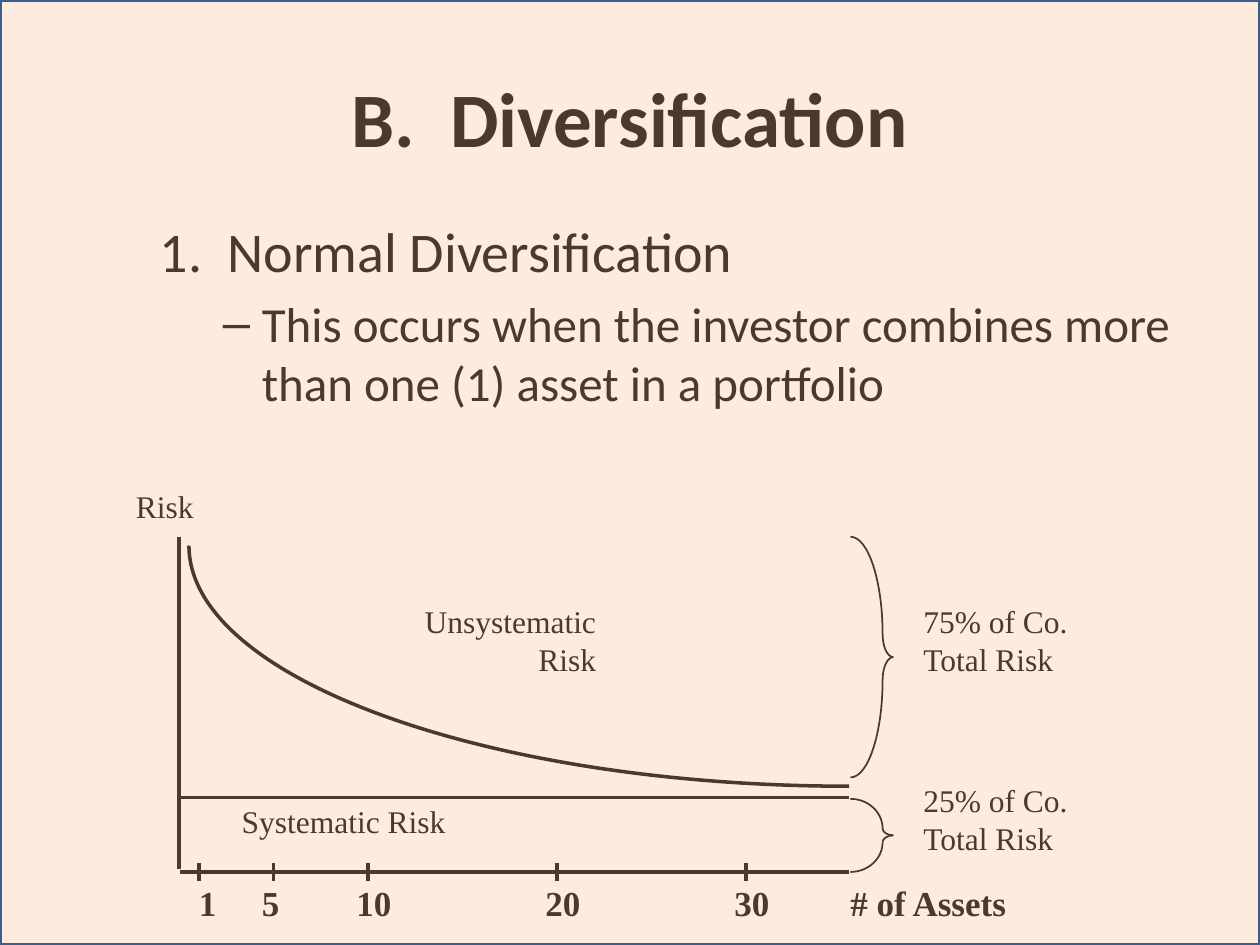
from dataclasses import dataclass

from lxml import etree
from pptx import Presentation
from pptx import util as u
from pptx.dml.color import RGBColor
from pptx.enum import shapes, text
from pptx.oxml.ns import qn

EMU_PER_PX = 9144  # 100 px to the inch
ROUND = 0.55  # handle length of a quarter ellipse, as a share of its radius


@dataclass(frozen=True)
class Theme:
    ink: RGBColor = RGBColor(0, 0, 0)
    tint: RGBColor = RGBColor(0xFA, 0xC0, 0x90)
    border: RGBColor = RGBColor(0x3A, 0x5F, 0x8C)
    tint_alpha: int = 30
    sans: str = "Calibri"
    serif: str = "Times New Roman"
    bullet: str = "Arial"
    title_size: int = 44
    point_size: int = 32
    detail_size: int = 28
    axis_size: int = 20
    label_size: int = 18
    heavy: int = 2
    light: int = 1


THEME = Theme()


def px(value):
    return u.Emu(round(value * EMU_PER_PX))


def apply(target, values):
    for name, value in values.items():
        setattr(target, name, value)


def place(shape, box):
    apply(shape, dict(zip(("left", "top", "width", "height"), map(px, box))))


def write(paragraph, words, font, size, bold=False):
    run = paragraph.add_run()
    run.text = words
    apply(run.font, {"name": font, "size": u.Pt(size), "bold": bold})
    run.font.color.rgb = THEME.ink


def add_label(slide, box, words, size=THEME.label_size, bold=False,
              align=text.PP_ALIGN.LEFT):
    label = slide.shapes.add_textbox(*map(px, box))
    apply(label.text_frame, {"word_wrap": False,
                             "auto_size": text.MSO_AUTO_SIZE.SHAPE_TO_FIT_TEXT})
    paragraph = label.text_frame.paragraphs[0]
    paragraph.alignment = align
    for number, line in enumerate(words):
        if number:
            paragraph.add_line_break()
        write(paragraph, line, THEME.serif, size, bold)


def add_line(slide, x1, y1, x2, y2):
    line = slide.shapes.add_connector(
        shapes.MSO_CONNECTOR.STRAIGHT, *map(px, (x1, y1, x2, y2)))
    line.line.color.rgb = THEME.ink
    line.line.width = u.Pt(THEME.heavy)
    etree.SubElement(line._element.spPr, qn("a:effectLst"))


def add_quarter(slide, start, end, weight, level_first):
    """Draw a quarter ellipse that leaves its start level or upright."""
    (x1, y1), (x2, y2) = start, end
    across, down = ROUND * (x2 - x1), ROUND * (y2 - y1)
    if level_first:
        handles = (x1 + across, y1), (x2, y2 - down)
    else:
        handles = (x1, y1 + down), (x2 - across, y2)

    builder = slide.shapes.build_freeform(px(x1), px(y1))
    builder.add_line_segments([(px(x2), px(y2))], close=False)
    curve = builder.convert_to_shape()
    # Bend the straight segment into a cubic curve
    segment = next(curve._element.iter(qn("a:lnTo")))
    bend = etree.Element(qn("a:cubicBezTo"))
    for x, y in (*handles, end):
        etree.SubElement(bend, qn("a:pt"), x=str(px(x) - curve.left),
                         y=str(px(y) - curve.top))
    segment.getparent().replace(segment, bend)

    curve.fill.background()
    curve.line.color.rgb = THEME.ink
    curve.line.width = u.Pt(weight)
    curve.shadow.inherit = False


def add_title(slide, box):
    title = slide.shapes.title
    place(title, box)
    title.text_frame.vertical_anchor = text.MSO_ANCHOR.MIDDLE
    paragraph = title.text_frame.paragraphs[0]
    paragraph.alignment = text.PP_ALIGN.CENTER
    write(paragraph, "B.  Diversification", THEME.sans, THEME.title_size, True)


def add_body(slide, box):
    frame = slide.shapes.add_textbox(*map(px, box)).text_frame
    frame.word_wrap = True
    point, detail = frame.paragraphs[0], frame.add_paragraph()
    for paragraph, margin, indent in ((point, 38, -38), (detail, 81, -31)):
        properties = paragraph._p.get_or_add_pPr()
        properties.set("marL", str(px(margin)))
        properties.set("indent", str(px(indent)))
    etree.SubElement(detail._p.pPr, qn("a:buFont"), typeface=THEME.bullet)
    etree.SubElement(detail._p.pPr, qn("a:buChar"), char="–")
    apply(detail, {"level": 1, "space_before": u.Pt(0.2 * THEME.detail_size)})
    write(point, "1.  Normal Diversification", THEME.sans, THEME.point_size)
    write(detail, "This occurs when the investor combines more than one (1) "
          "asset in a portfolio", THEME.sans, THEME.detail_size)


def add_brace(slide, box):
    """Right brace: each half is a long outer curve and a short tip."""
    left, top, width, height = box
    stem, point, middle = left + 0.75 * width, left + width, top + height / 2
    for edge, side in ((top, 1), (top + height, -1)):
        joint = edge + side * 0.405 * height
        add_quarter(slide, (left, edge), (stem, joint), THEME.light, True)
        add_quarter(slide, (stem, joint), (point, middle), THEME.light, False)


def add_risk_chart(slide, box):
    left, top, width, height = box
    right, bottom = left + width, top + height
    floor = bottom - 59  # level of systematic risk

    # Axes, systematic risk and the falling curve
    add_line(slide, left, top, left, bottom - 2)
    for level in (bottom, floor):
        add_line(slide, left + 1, level, right, level)
    add_quarter(slide, (left + 8, top + 7), (right, floor - 9),
                THEME.heavy, False)

    # Ticks with their numbers of assets
    for assets, tick, offset in ((1, 16, 6), (5, 75, 56), (10, 150, 131),
                                 (20, 300, 281), (30, 450, 431)):
        add_line(slide, left + tick, bottom - 7, left + tick, bottom + 7)
        add_label(slide, (left + offset, bottom + 3, 34 if assets < 10 else 48, 43),
                  [str(assets)], THEME.axis_size, True)
    add_label(slide, (right - 9, bottom + 3, 145, 43), ["# of Assets"],
              THEME.axis_size, True)

    # Names of the axis and the areas
    add_label(slide, (left - 44, top - 44, 81, 50), ["Risk"])
    add_label(slide, (left + 40, floor - 1, 235, 50), ["Systematic Risk"])
    add_label(slide, (left + 140, top + 47, 201, 90), ["Unsystematic", "Risk"],
              align=text.PP_ALIGN.RIGHT)

    # Braces with the shares of total risk
    for share, brace_top, brace_height, label_top in (
            ("75%", top, 191, top + 47), ("25%", floor + 1, 58, floor - 18)):
        add_brace(slide, (right + 1, brace_top, 34, brace_height))
        add_label(slide, (right + 49, label_top, 173, 90),
                  [f"{share} of Co.", "Total Risk"])


def add_tint(slide, box):
    """Translucent sheet that colours the whole slide."""
    sheet = slide.shapes.add_shape(shapes.MSO_SHAPE.RECTANGLE, *map(px, box))
    sheet.shadow.inherit = False
    sheet.fill.solid()
    sheet.fill.fore_color.rgb = THEME.tint
    color = sheet._element.spPr.find(qn("a:solidFill"))[0]
    etree.SubElement(color, qn("a:alpha"), val=str(THEME.tint_alpha * 1000))
    sheet.line.color.rgb = THEME.border
    sheet.line.width = u.Pt(THEME.heavy)


def main():
    presentation = Presentation()
    apply(presentation, {"slide_width": px(1000), "slide_height": px(750)})
    slide = presentation.slides.add_slide(presentation.slide_layouts[5])
    add_title(slide, (50, 30, 900, 125))
    add_body(slide, (117, 167, 850, 550))
    add_risk_chart(slide, (142, 426, 532, 266))
    add_tint(slide, (0, 0, 1000, 750))
    presentation.save("out.pptx")


if __name__ == "__main__":
    main()
